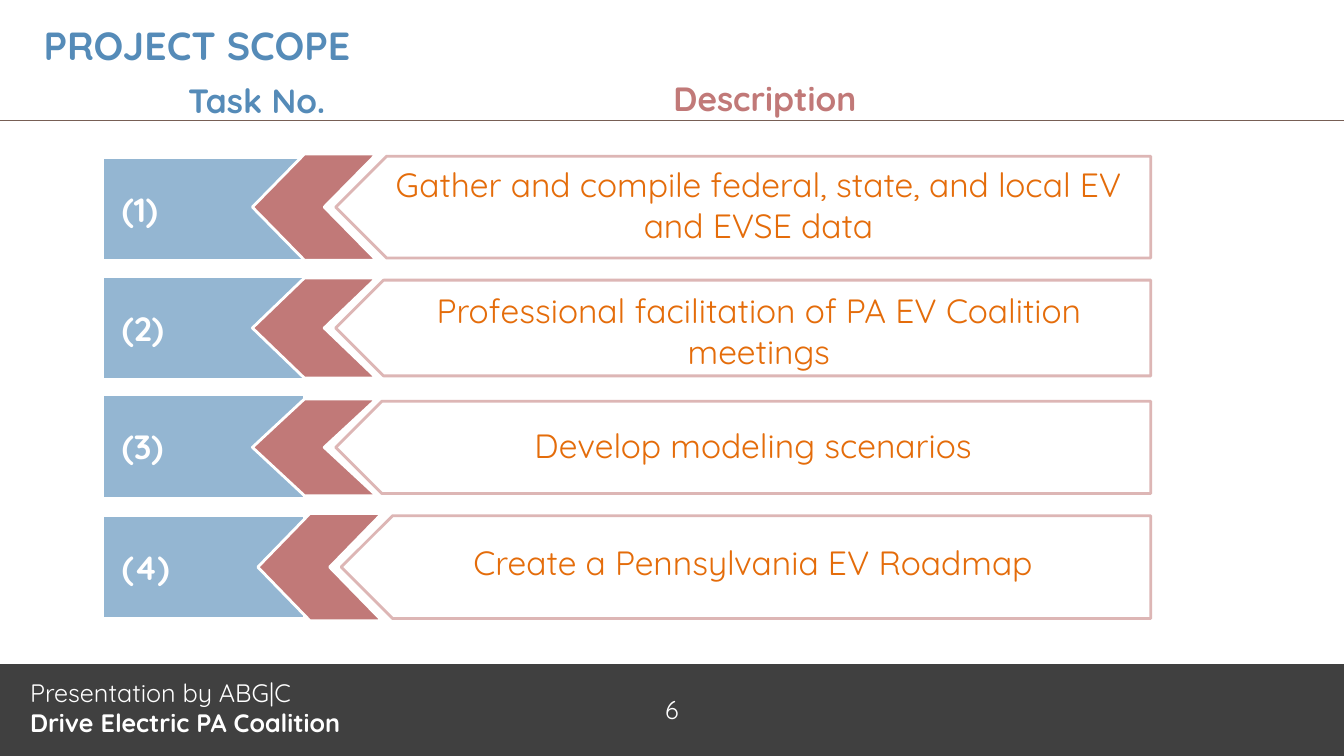
from dataclasses import dataclass

from lxml.etree import SubElement
from pptx import Presentation
from pptx.dml.color import RGBColor
from pptx.enum.shapes import MSO_CONNECTOR, MSO_SHAPE
from pptx.enum.text import MSO_ANCHOR, PP_ALIGN
from pptx.oxml.ns import qn
from pptx.util import Pt


@dataclass(frozen=True)
class Theme:
    font: str = "Quicksand"
    white: str = "FFFFFF"
    footer: str = "404040"
    rule: str = "775F55"
    heading: str = "558BB8"
    task: str = "94B6D2"
    arrow: str = "C17978"
    plate_edge: str = "DAAFAE"
    description: str = "E46C0A"
    title_size: int = 28
    body_size: int = 24
    footer_size: int = 18


class ScopeSlide:
    def __init__(self, slide, theme):
        self.shapes = slide.shapes
        self.theme = theme

    def style(self, shape, fill, line=None, width=2):
        shape.shadow.inherit = False
        shape.fill.solid()
        shape.fill.fore_color.rgb = RGBColor.from_string(fill)
        if line:
            shape.line.color.rgb = RGBColor.from_string(line)
            shape.line.width = Pt(width)
        else:
            shape.line.fill.background()
        return shape

    def add_words(self, paragraph, words, size, color, bold=False, align=PP_ALIGN.LEFT):
        paragraph.alignment = align
        run = paragraph.add_run()
        run.text = words
        run.font.name = self.theme.font
        run.font.size = Pt(size)
        run.font.bold = bold
        run.font.color.rgb = RGBColor.from_string(color)

    def text(self, box, lines, size, color, align=PP_ALIGN.LEFT, wrap=True):
        """Put (words, bold) lines, one paragraph each, in a text box."""
        frame = self.shapes.add_textbox(*map(Pt, box)).text_frame
        frame.word_wrap = wrap
        for number, (words, bold) in enumerate(lines):
            paragraph = frame.add_paragraph() if number else frame.paragraphs[0]
            self.add_words(paragraph, words, size, color, bold, align)

    def block(self, box, fill, line=None, kind=MSO_SHAPE.RECTANGLE):
        shape = self.shapes.add_shape(kind, *map(Pt, box))
        shape.text_frame.vertical_anchor = MSO_ANCHOR.MIDDLE
        return self.style(shape, fill, line)

    def rule(self, y, color):
        line = self.shapes.add_connector(
            MSO_CONNECTOR.STRAIGHT, Pt(0), Pt(y), Pt(SLIDE_WIDTH), Pt(y))
        line.line.color.rgb = RGBColor.from_string(color)
        line.line.width = Pt(0.75)
        SubElement(line._element.spPr, qn("a:effectLst"))

    def task(self, top, number):
        theme = self.theme
        frame = self.block((73.5, top, 144, 73.5), theme.task, theme.white).text_frame
        frame.margin_left = Pt(13.5)
        self.add_words(frame.paragraphs[0], f"({number})", theme.body_size, theme.white, True)

    def plate(self, left, top, height):
        """Left-pointing plate with a slightly transparent fill and edge."""
        box = (left, top, PLATE_RIGHT - left, height)
        plate = self.block(box, self.theme.white, self.theme.plate_edge, MSO_SHAPE.PENTAGON)
        plate._element.spPr.xfrm.set("flipH", "1")
        for color in plate._element.spPr.iter(qn("a:srgbClr")):
            SubElement(color, qn("a:alpha"), val="90000")

    def chevron(self, left, top, height):
        middle, bottom = top + height / 2, top + height
        right, shoulder, notch = left + 88.6, left + 37.2, left + 51.3
        outline = self.shapes.build_freeform(Pt(right), Pt(top))
        outline.add_line_segments([(Pt(x), Pt(y)) for x, y in (
            (shoulder, top), (left, middle), (shoulder, bottom),
            (right, bottom), (notch, middle))], close=True)
        self.style(outline.convert_to_shape(), self.theme.arrow, self.theme.white)


SLIDE_WIDTH, SLIDE_HEIGHT = 960, 540
FOOTER_TOP = 474
PLATE_RIGHT = 822

# Task top, plate (left, top, height), description box, description
TASKS = [
    (112.3, (239.8, 111.6, 72.7), (262, 113.8, 559.5, 65.5),
     "Gather and compile federal, state, and local EV and EVSE data"),
    (197.3, (239.8, 200.1, 68.4), (267, 203.8, 550, 65.5),
     "Professional facilitation of PA EV Coalition meetings"),
    (282.2, (239.8, 286.6, 65.9), (301.7, 300.2, 472.3, 36),
     "Develop modeling scenarios"),
    (368.6, (243.7, 368.4, 73.4), (301.7, 383.8, 472.3, 36),
     "Create a Pennsylvania EV Roadmap"),
]


def main():
    deck = Presentation()
    deck.slide_width, deck.slide_height = Pt(SLIDE_WIDTH), Pt(SLIDE_HEIGHT)
    theme = Theme()
    page = ScopeSlide(deck.slides.add_slide(deck.slide_layouts[6]), theme)

    # Footer
    footer = page.block(
        (0, FOOTER_TOP, SLIDE_WIDTH, SLIDE_HEIGHT - FOOTER_TOP), theme.footer)
    page.add_words(footer.text_frame.paragraphs[0], "6", theme.footer_size, theme.white,
                   align=PP_ALIGN.CENTER)
    page.rule(FOOTER_TOP, theme.white)
    page.text((14.4, 480.2, 352, 56),
              [("Presentation by ABG|C", False), ("Drive Electric PA Coalition", True)],
              theme.footer_size, theme.white)

    # Title and column headings
    page.rule(86.4, theme.rule)
    page.text((24, 11.5, 912, 62.6), [("PROJECT SCOPE", True)],
              theme.title_size, theme.heading)
    page.text((473.8, 51.8, 152.6, 36), [("Description", True)],
              theme.body_size, theme.arrow, wrap=False)
    page.text((127.4, 53.6, 112.3, 36), [("Task No.", True)],
              theme.body_size, theme.heading, wrap=False)

    # Task rows
    for number, (task_top, (left, top, height), box, description) in enumerate(TASKS, 1):
        page.task(task_top, number)
        page.plate(left, top, height)
        page.chevron(left - 59.5, top - 1.6, height + 3.2)
        page.text(box, [(description, False)], theme.body_size, theme.description,
                  PP_ALIGN.CENTER)

    deck.save("out.pptx")


if __name__ == "__main__":
    main()
